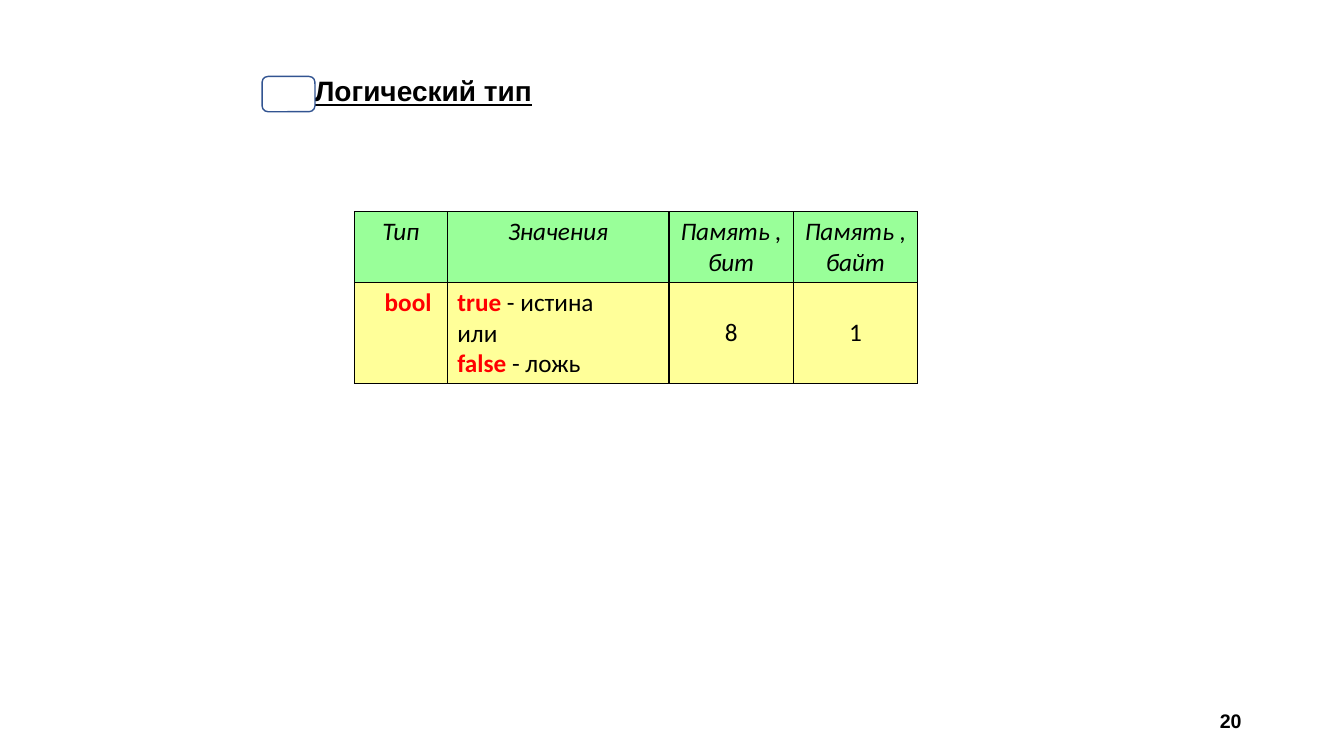
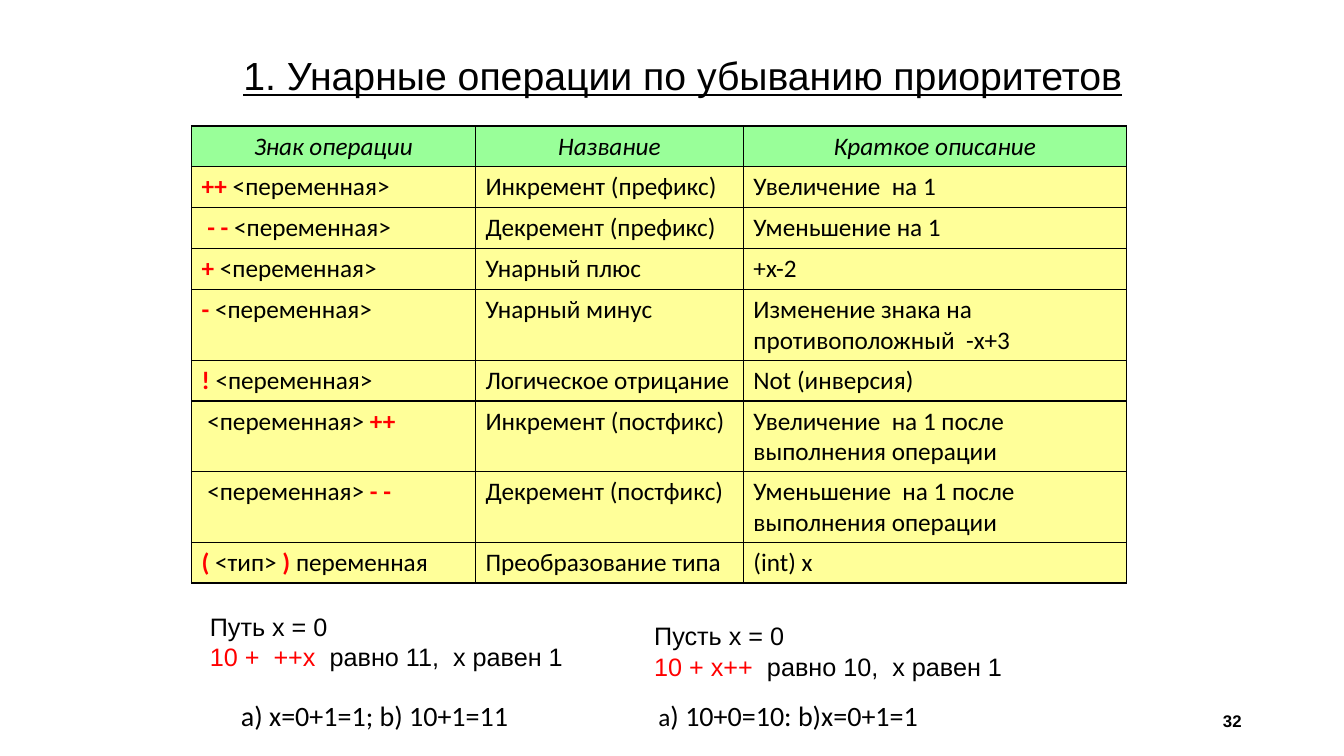
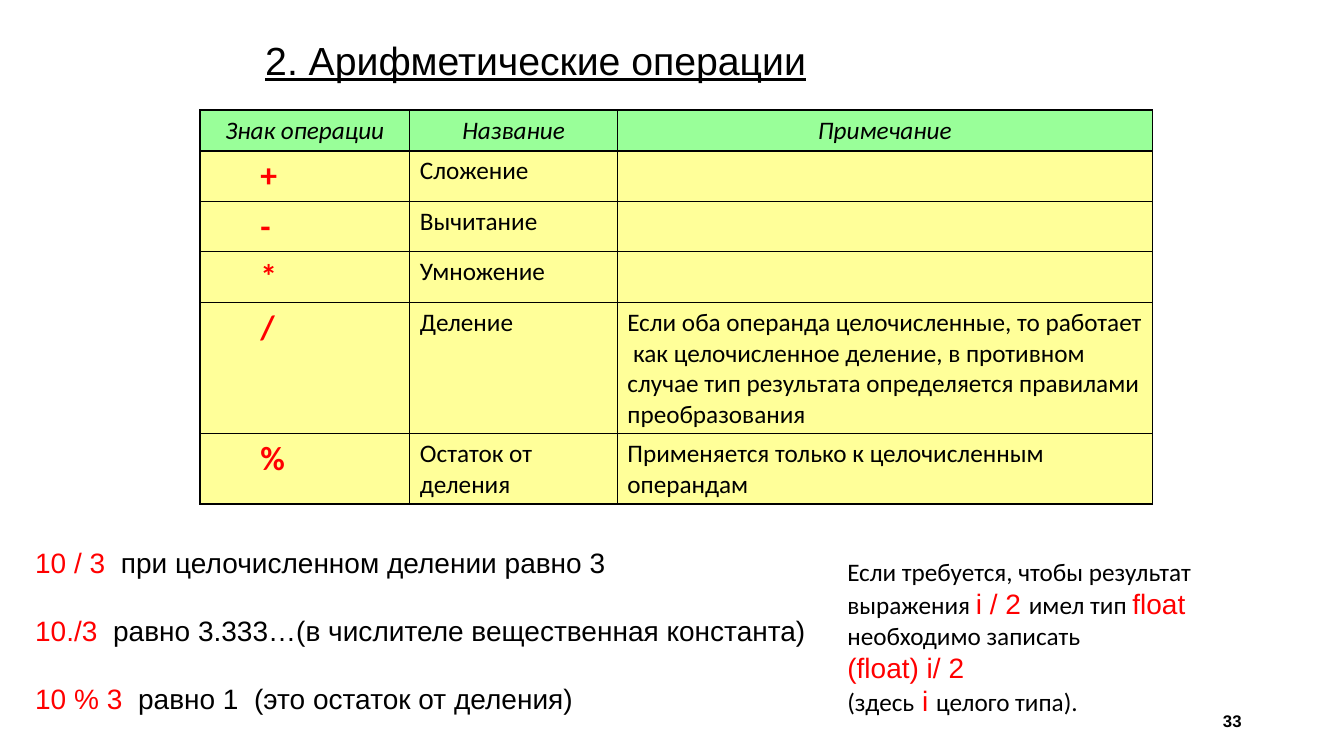
from collections import namedtuple

from lxml import etree
from pptx import Presentation
from pptx import util as u
from pptx.dml.color import RGBColor
from pptx.enum import shapes, text
from pptx.oxml import ns

Style = namedtuple("Style", "font size color bold italic underline",
                   defaults=("000000", False, False, False))


class Theme:
    header_fill, body_fill = "99FF99", "FFFF99"
    badge_fill, badge_line = "FFFFFF", "325491"
    border = "000000"
    red = "FF0000"
    section = Style("Arial", 20, bold=True, underline=True)
    title = Style("Arial", 28, underline=True)
    page_large = Style("Arial", 14, bold=True)
    page_small = Style("Arial", 12, bold=True)
    header = Style("Calibri", 18, italic=True)
    cell = Style("Calibri", 18)
    keyword = Style("Calibri", 18, red, bold=True)
    sign = Style("Calibri", 24, red, bold=True)
    example = Style("Arial", 18)
    example_red = Style("Arial", 18, red)
    large = Style("Arial", 20)
    large_red = Style("Arial", 20, red)
    working = Style("Calibri", 20)


prs = Presentation()
prs.slide_width, prs.slide_height = u.Inches(13.33), u.Inches(7.5)
COL, ROW = prs.slide_width / 160, prs.slide_height / 90
LEFT, CENTER, RIGHT = text.PP_ALIGN.LEFT, text.PP_ALIGN.CENTER, text.PP_ALIGN.RIGHT


def write(frame, lines, base, accent=None, align=LEFT, indent=0, gap=0):
    """Fill a text frame; every second part between bars takes the accent style."""
    for number, line in enumerate(lines):
        paragraph = frame.add_paragraph() if number else frame.paragraphs[0]
        paragraph.alignment = align
        if indent:
            paragraph._p.get_or_add_pPr().set("marL", str(round(indent * COL)))
        if number and gap:
            paragraph.space_before = u.Pt(gap)
        styled = [(paragraph.font, base)]
        for position, part in enumerate(line.split("|")):
            if part:
                run = paragraph.add_run()
                run.text = part
                if position % 2:
                    styled.append((run.font, accent))
        for font, style in styled:
            font.name, font.size = style.font, u.Pt(style.size)
            font.bold, font.italic = style.bold, style.italic
            font.underline = style.underline
            font.color.rgb = RGBColor.from_string(style.color)


def add_text(slide, box, lines, base, accent=None, **layout):
    left, top, width, height = box
    frame = slide.shapes.add_textbox(round(left * COL), round(top * ROW),
                                     round(width * COL), round(height * ROW)).text_frame
    frame.word_wrap = True
    write(frame, lines, base, accent, **layout)
    return frame


pages = [
    dict(
        number="20", number_style=Theme.page_large,
        title="Логический тип", title_style=Theme.section,
        title_box=(29.9, 8.2, 69, 5.3), title_indent=6.4,
        table_at=(42.2, 25.2), columns=(11.05, 26.4, 14.8, 14.8), rows=(8.4, 12),
        sign_style=Theme.keyword, sign_indent=2.4, centered_from=2,
        cells=[
            ["Тип", "Значения", "Память , бит", "Память , байт"],
            ["|bool|", "|true |- истина\nили\n|false |- ложь", "8", "1"],
        ],
        texts=[],
    ),
    dict(
        number="32", number_style=Theme.page_small,
        title="1. Унарные операции по убыванию приоритетов", title_style=Theme.title,
        title_box=(27.8, 5.5, 107.4, 6.8), title_indent=0,
        table_at=(22.8, 15), columns=(33.8, 31.9, 45.6),
        rows=(4.87, 4.87, 4.87, 4.87, 8.4, 4.87, 8.4, 8.4, 4.87),
        sign_style=Theme.keyword, sign_indent=0, centered_from=3,
        cells=[
            ["Знак операции", "Название", "Краткое описание"],
            ["|++ |<переменная>", "Инкремент (префикс)", "Увеличение  на 1"],
            ["| - - |<переменная>", "Декремент (префикс)", "Уменьшение на 1"],
            ["|+ |<переменная>", "Унарный плюс", "+x-2"],
            ["|- |<переменная>", "Унарный минус",
             "Изменение знака на противоположный  -x+3"],
            ["|! |<переменная>", "Логическое отрицание", "Not (инверсия)"],
            ["| |<переменная> |++|", "Инкремент (постфикс)",
             "Увеличение  на 1 после выполнения операции"],
            ["| |<переменная>| - -|", "Декремент (постфикс)",
             "Уменьшение  на 1 после выполнения операции"],
            ["|( |<тип> |) |переменная", "Преобразование типа", "(int) x"],
        ],
        texts=[
            ((23.8, 72.2, 47.3, 8.5),
             ["Путь x = 0", "|10 +  ++x  |равно 11,  x равен 1"],
             Theme.example, Theme.example_red, 0),
            ((76.7, 73.3, 45.8, 8.5),
             ["Пусть x = 0", "|10 + x++  |равно 10,  x равен 1"],
             Theme.example, Theme.example_red, 0),
            ((27.5, 82.6, 34.6, 5.3), ["a) x=0+1=1; b) 10+1=11"],
             Theme.working, None, 0),
            ((77.2, 82.6, 35.2, 5.3), ["|a|) 10+0=10: b)x=0+1=1"],
             Theme.working, Theme.cell, 0),
        ],
    ),
    dict(
        number="33", number_style=Theme.page_small,
        title="2. Арифметические операции", title_style=Theme.title,
        title_box=(30.4, 3.7, 98.3, 6.8), title_indent=0,
        table_at=(23.8, 13.1), columns=(25, 24.7, 63.7),
        rows=(4.87, 6, 6, 6, 15.6, 8.4),
        sign_style=Theme.sign, sign_indent=6, centered_from=3,
        cells=[
            ["Знак операции", "Название", "Примечание"],
            ["|+|", "Сложение", ""],
            ["|-|", "Вычитание", ""],
            ["|*|", "Умножение", ""],
            ["|/|", "Деление",
             "Если оба операнда целочисленные, то работает  как целочисленное деление, "
             "в противном случае тип результата определяется правилами преобразования"],
            ["|%|", "Остаток от  деления",
             "Применяется только к целочисленным операндам"],
        ],
        texts=[
            ((3, 64.4, 97.7, 21.4),
             ["|10 / 3  |при целочисленном делении равно 3",
              "|10./3  |равно 3.333…(в числителе вещественная константа)",
              "|10 % 3  |равно 1  (это остаток от деления)"],
             Theme.large, Theme.large_red, 24.5),
            ((99.7, 65.6, 57.2, 20.6),
             ["Если требуется, чтобы результат выражения |i / 2 |имел тип |float |"
              "необходимо записать",
              "|(float) i/ 2|",
              "(здесь| i |целого типа)."],
             Theme.cell, Theme.large_red, 0),
        ],
    ),
]

for page in pages:
    slide = prs.slides.add_slide(prs.slide_layouts[6])
    number = add_text(slide, (113, 83.4, 36, 4.8), [page["number"]],
                      page["number_style"], align=RIGHT)
    number.vertical_anchor = text.MSO_ANCHOR.MIDDLE
    add_text(slide, page["title_box"], [page["title"]], page["title_style"],
             indent=page["title_indent"])

    columns, rows = page["columns"], page["rows"]
    left, top = page["table_at"]
    table = slide.shapes.add_table(
        len(rows), len(columns), round(left * COL), round(top * ROW),
        round(sum(columns) * COL), round(sum(rows) * ROW)).table
    table.first_row = table.horz_banding = False
    for column, width in zip(table.columns, columns):
        column.width = round(width * COL)
    for row, height in zip(table.rows, rows):
        row.height = round(height * ROW)

    for r, values in enumerate(page["cells"]):
        for c, value in enumerate(values):
            cell = table.cell(r, c)
            is_header, is_centered = r == 0, c >= page["centered_from"]
            properties = cell._tc.get_or_add_tcPr()
            for side in ("lnL", "lnR", "lnT", "lnB"):
                line = etree.SubElement(properties, ns.qn("a:" + side), w=str(u.Pt(1)))
                fill = etree.SubElement(line, ns.qn("a:solidFill"))
                etree.SubElement(fill, ns.qn("a:srgbClr"), val=Theme.border)
            cell.fill.solid()
            cell.fill.fore_color.rgb = RGBColor.from_string(
                Theme.header_fill if is_header else Theme.body_fill)
            if is_centered and not is_header:
                cell.vertical_anchor = text.MSO_ANCHOR.MIDDLE
            write(cell.text_frame, value.split("\n"),
                  Theme.header if is_header else Theme.cell,
                  Theme.keyword if c else page["sign_style"],
                  align=CENTER if is_header or is_centered else LEFT,
                  indent=0 if is_header or c else page["sign_indent"])

    for box, lines, base, accent, gap in page["texts"]:
        add_text(slide, box, lines, base, accent, gap=gap)

badge = prs.slides[0].shapes.add_shape(
    shapes.MSO_SHAPE.ROUNDED_RECTANGLE,
    round(31.2 * COL), round(9.1 * ROW), round(6.3 * COL), round(4.2 * ROW))
badge.shadow.inherit = False
badge.fill.solid()
badge.fill.fore_color.rgb = RGBColor.from_string(Theme.badge_fill)
badge.line.color.rgb = RGBColor.from_string(Theme.badge_line)
badge.line.width = u.Pt(1)

prs.save("out.pptx")
